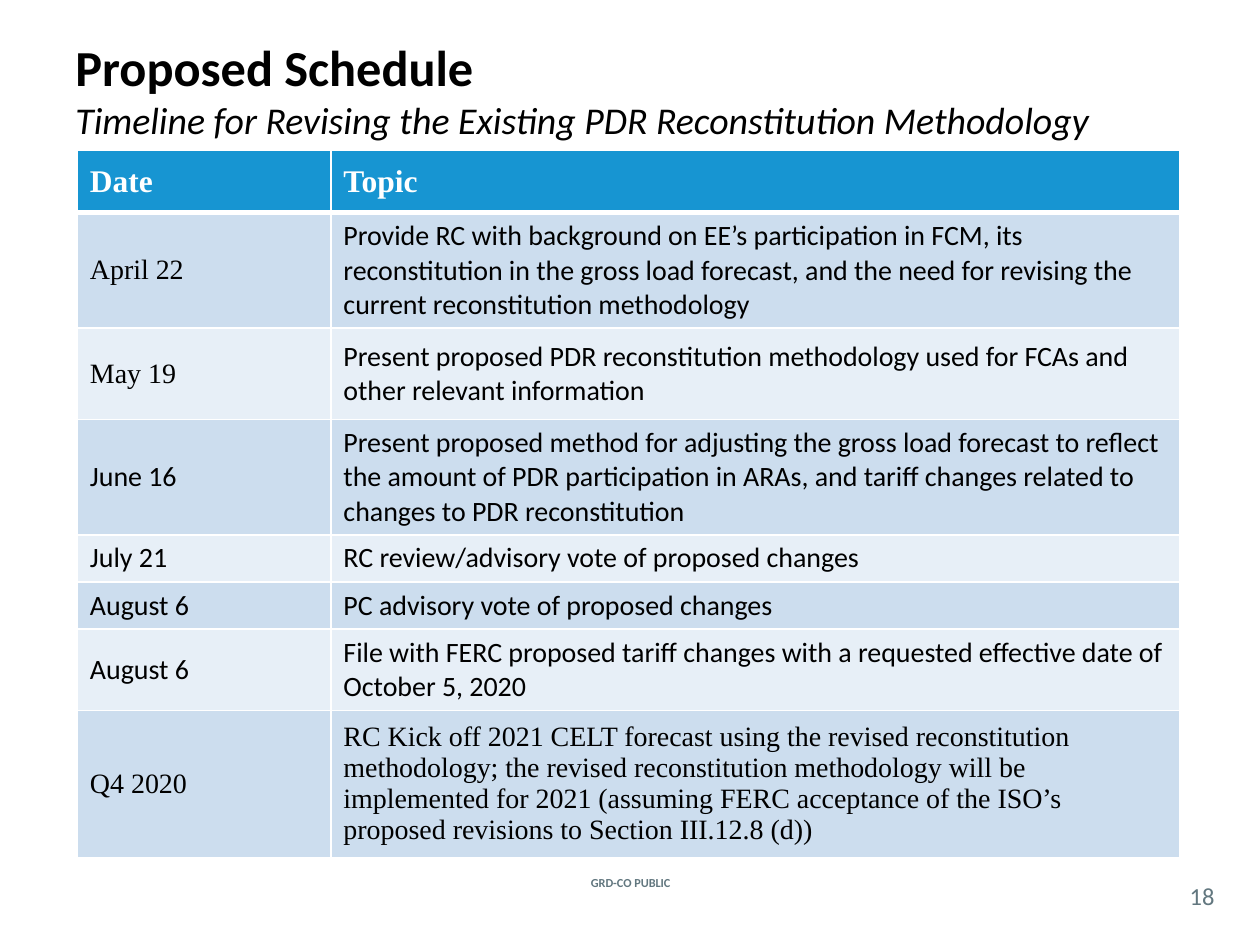
"""Build the proposed schedule slide."""
from dataclasses import dataclass

from lxml.etree import SubElement
from pptx import Presentation
from pptx.dml.color import RGBColor
from pptx.enum.text import MSO_ANCHOR, PP_ALIGN
from pptx.oxml.ns import qn
from pptx.slide import Slide
from pptx.table import Table, _Cell
from pptx.text.text import _Paragraph
from pptx.util import Cm, Pt

SANS, SERIF = "Calibri", "Times New Roman"
BLACK, WHITE, GREY = "000000", "FFFFFF", "62777F"
HEAD, DARK, LIGHT = "1795D2", "CCDDEE", "E7EFF7"
WIDTHS = (5.11, 17.12)


@dataclass(frozen=True)
class Line:
    """One paragraph and its font."""
    text: str
    size: float
    face: str = SANS
    hue: str = BLACK
    bold: bool = False
    slant: bool = False


@dataclass(frozen=True)
class Box:
    """A text box in centimetres."""
    left: float
    top: float
    width: float
    height: float
    lines: tuple[Line, ...]
    align: PP_ALIGN = PP_ALIGN.CENTER
    inset: float = 0


@dataclass(frozen=True)
class Row:
    """A schedule row: height in centimetres, texts and fonts."""
    height: float
    date: str
    topic: str
    faces: tuple[str, str] = (SANS, SANS)


BOXES = (
    Box(1.27, 0.2, 22.86, 3.18, (
        Line("Proposed Schedule", 28.8, bold=True),
        Line("Timeline for Revising the Existing PDR Reconstitution Methodology",
             21.6, slant=True),
    ), PP_ALIGN.LEFT, 0.25),
    Box(10.85, 17.58, 3.73, 0.43, (Line("GRD-CO PUBLIC", 7, hue=GREY, bold=True),)),
    Box(23.7, 17.68, 1.07, 0.74, (Line("18", 14, hue=GREY),)),
)

ROWS = (
    Row(1.27, "Date", "Topic", (SERIF, SERIF)),
    Row(2.32, "April 22",
        "Provide RC with background on EE’s participation in FCM, its "
        "reconstitution in the gross load forecast, and the need for revising "
        "the current reconstitution methodology", (SERIF, SANS)),
    Row(1.85, "May 19",
        "Present proposed PDR reconstitution methodology used for FCAs and "
        "other relevant information", (SERIF, SANS)),
    Row(2.32, "June 16",
        "Present proposed method for adjusting the gross load forecast to "
        "reflect the amount of PDR participation in ARAs, and tariff changes "
        "related to changes to PDR reconstitution"),
    Row(0.95, "July 21", "RC review/advisory vote of proposed changes"),
    Row(0.95, "August 6", "PC advisory vote of proposed changes"),
    Row(1.64, "August 6",
        "File with FERC proposed tariff changes with a requested effective "
        "date of October 5, 2020"),
    Row(2.75, "Q4 2020",
        "RC Kick off 2021 CELT forecast using the revised reconstitution "
        "methodology; the revised reconstitution methodology will be "
        "implemented for 2021 (assuming FERC acceptance of the ISO’s proposed "
        "revisions to Section III.12.8 (d))", (SERIF, SERIF)),
)


def tint(code: str) -> RGBColor:
    """Turn a hex string into a colour."""
    return RGBColor.from_string(code)


def write(para: _Paragraph, line: Line) -> None:
    """Put a line into a paragraph and set its font."""
    para.text = line.text
    font = para.font
    font.name, font.size = line.face, Pt(line.size)
    font.bold, font.italic = line.bold, line.slant
    font.color.rgb = tint(line.hue)


def draw(slide: Slide, box: Box) -> None:
    """Add a text box with its lines."""
    shape = slide.shapes.add_textbox(
        Cm(box.left), Cm(box.top), Cm(box.width), Cm(box.height))
    frame = shape.text_frame
    frame.word_wrap = True
    frame.vertical_anchor = MSO_ANCHOR.MIDDLE
    frame.margin_left = frame.margin_right = Cm(box.inset)
    frame.margin_top = frame.margin_bottom = 0
    for index, line in enumerate(box.lines):
        para = frame.add_paragraph() if index else frame.paragraphs[0]
        para.alignment = box.align
        write(para, line)


def edge(cell: _Cell, side: str, width: float) -> None:
    """Add a white border to one side of a cell."""
    rule = SubElement(cell._tc.get_or_add_tcPr(), qn(f"a:ln{side}"), w=str(Pt(width)))
    fill = SubElement(rule, qn("a:solidFill"))
    SubElement(fill, qn("a:srgbClr"), val=WHITE)


def fill_row(table: Table, index: int, row: Row) -> None:
    """Write and style one table row."""
    table.rows[index].height = Cm(row.height)
    first = index == 0
    back = HEAD if first else DARK if index % 2 else LIGHT
    widths = {"L": 1, "R": 1, "T": 3 if index == 1 else 1, "B": 3 if first else 1}
    for col, (text, face) in enumerate(zip((row.date, row.topic), row.faces)):
        cell = table.cell(index, col)
        for side, width in widths.items():
            edge(cell, side, width)
        cell.fill.solid()
        cell.fill.fore_color.rgb = tint(back)
        cell.vertical_anchor = MSO_ANCHOR.MIDDLE
        write(cell.text_frame.paragraphs[0],
              Line(text, 18 if first else 16, face, WHITE if first else BLACK, first))


def main() -> None:
    """Build and save the slide."""
    deck = Presentation()
    deck.slide_width, deck.slide_height = Cm(25.4), Cm(19.05)
    slide = deck.slides.add_slide(deck.slide_layouts[6])
    for box in BOXES:
        draw(slide, box)
    table = slide.shapes.add_table(
        len(ROWS), len(WIDTHS), Cm(1.56), Cm(3.02),
        Cm(sum(WIDTHS)), Cm(sum(row.height for row in ROWS))).table
    for col, width in zip(table.columns, WIDTHS):
        col.width = Cm(width)
    for index, row in enumerate(ROWS):
        fill_row(table, index, row)
    deck.save("out.pptx")


if __name__ == "__main__":
    main()
